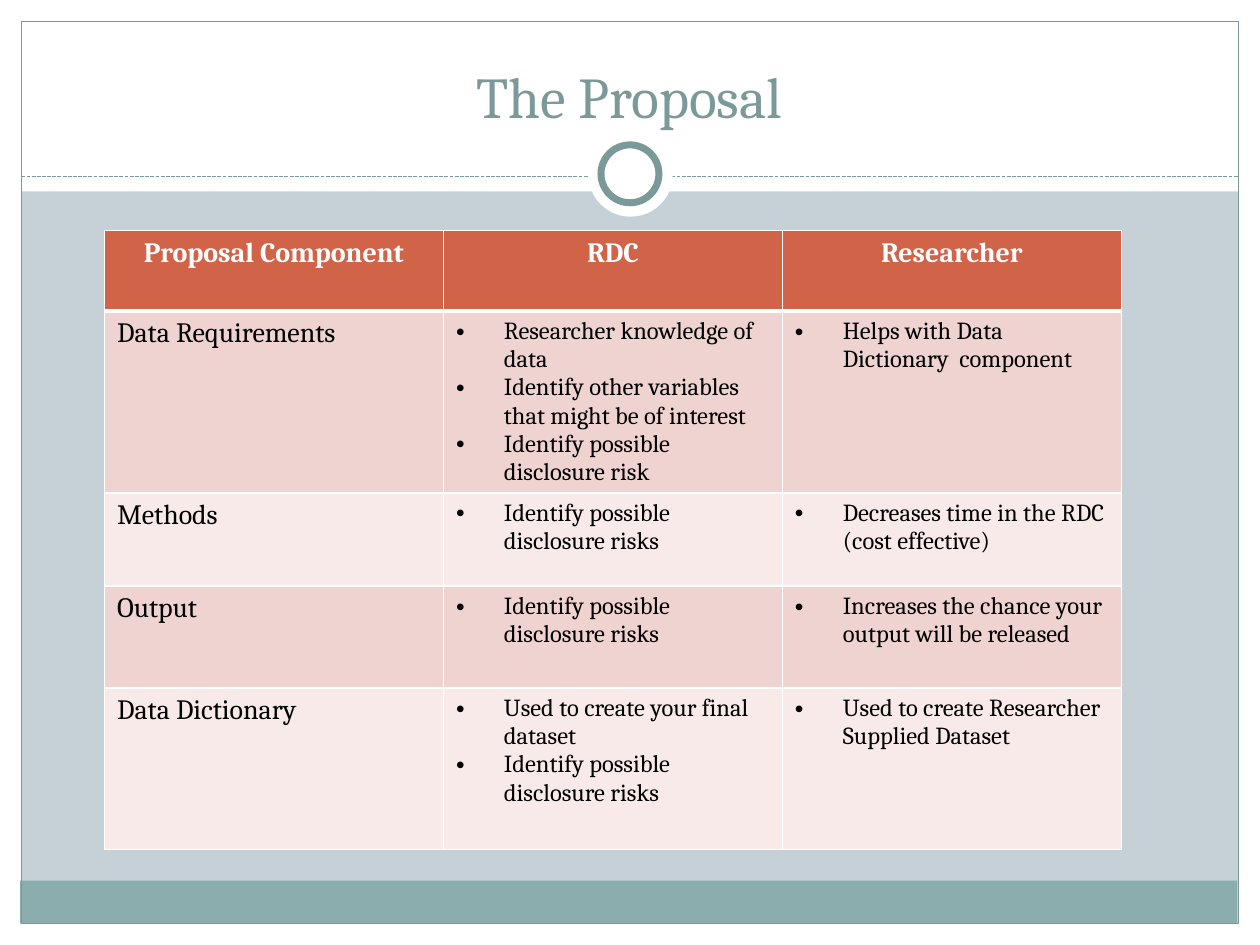
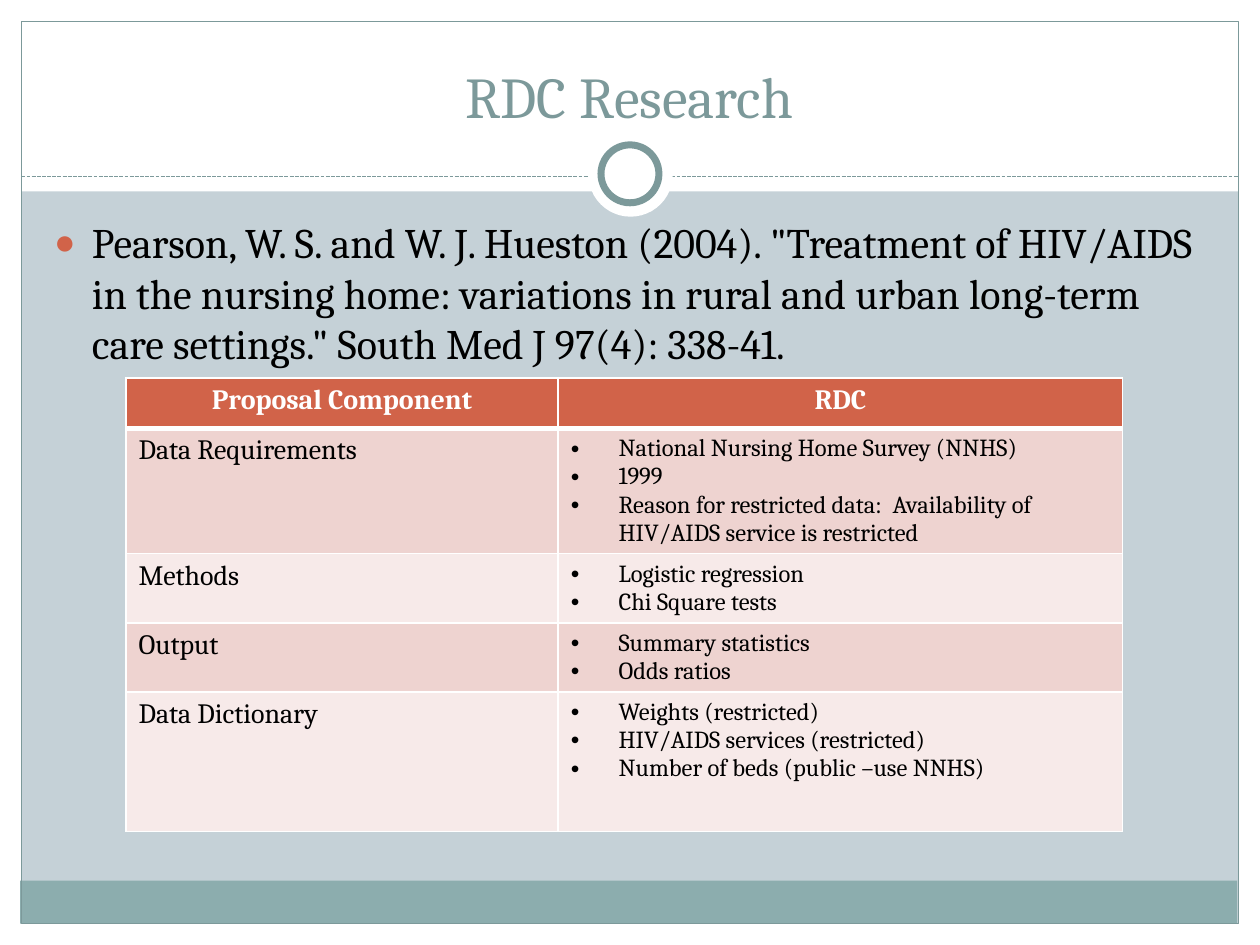
from dataclasses import dataclass

from lxml.etree import SubElement
from pptx import Presentation
from pptx.dml.color import RGBColor
from pptx.enum.dml import MSO_LINE
from pptx.enum.shapes import MSO_CONNECTOR, MSO_SHAPE
from pptx.enum.text import MSO_ANCHOR, MSO_AUTO_SIZE, PP_ALIGN
from pptx.oxml.ns import qn
from pptx.util import Inches, Pt

FONT = "Cambria"
WHITE, BLACK = "FFFFFF", "000000"
BACK, TEAL, BAND, RUST = "C5D1D7", "7C999A", "8CADAE", "D16349"
ROSE, BLUSH = "EED3D0", "F7EAE9"


@dataclass
class Part:
    """One piece of the slide frame, lengths in inches."""
    box: tuple[float, float, float, float]
    fill: str = ""
    line: float = 0
    kind: MSO_SHAPE = MSO_SHAPE.RECTANGLE


@dataclass
class Grid:
    """A table: the first row is the header, tuples in cells are bullet lists."""
    left: float
    top: float
    cols: list[float]
    highs: list[float]
    rows: list[list[str | tuple[str, ...]]]


PARTS = [
    Part((0, 7.33, 10, 0.17), WHITE),
    Part((0, 0, 10, 1.52), WHITE),
    Part((0, 0, 0.17, 7.5), WHITE),
    Part((9.83, 0, 0.17, 7.5), WHITE),
    Part((0.16, 6.99, 9.66, 0.34), BAND),
    Part((0.17, 0.17, 9.66, 7.16), line=0.75),
]
RINGS = [
    Part((4.67, 1.05, 0.67, 0.67), WHITE, kind=MSO_SHAPE.OVAL),
    Part((4.77, 1.15, 0.46, 0.46), WHITE, 4, MSO_SHAPE.OVAL),
]

RISKS = ("Identify possible disclosure risks",)
ROLES = Grid(0.83, 1.83, [2.69] * 3, [0.64, 1.04, 0.74, 0.81, 1.28], [
    ["Proposal Component", "RDC", "Researcher"],
    ["Data Requirements",
     ("Researcher knowledge of data",
      "Identify other variables that might be of interest",
      "Identify possible disclosure risk"),
     ("Helps with Data Dictionary  component",)],
    ["Methods", RISKS, ("Decreases time in the RDC (cost effective)",)],
    ["Output", RISKS, ("Increases the chance your output will be released",)],
    ["Data Dictionary", ("Used to create your final dataset", *RISKS),
     ("Used to create Researcher Supplied Dataset",)],
])
STUDY = Grid(1, 3, [3.43, 4.48], [0.4, 0.76, 0.5, 0.5, 1.11], [
    ["Proposal Component", "RDC"],
    ["Data Requirements",
     ("National Nursing Home Survey (NNHS)", "1999",
      "Reason for restricted data:  Availability of HIV/AIDS service is restricted")],
    ["Methods", ("Logistic regression", "Chi Square tests")],
    ["Output", ("Summary statistics", "Odds ratios")],
    ["Data Dictionary",
     ("Weights (restricted)", "HIV/AIDS services (restricted)",
      "Number of beds (public –use NNHS)")],
])
CITE = ('Pearson, W. S. and W. J. Hueston (2004). "Treatment of HIV/AIDS in the '
        'nursing home: variations in rural and urban long-term care settings." '
        'South Med J 97(4): 338-41.')


def paint(color, code: str) -> None:
    color.rgb = RGBColor.from_string(code)


def style(para, size: float, code: str, bold: bool = False) -> None:
    for run in para.runs:
        run.font.name, run.font.size, run.font.bold = FONT, Pt(size), bold
        paint(run.font.color, code)


def bullet(para, char: str, indent: float, code: str = "", scale: int = 100) -> None:
    props = para._p.get_or_add_pPr()
    props.set("marL", str(Inches(indent)))
    props.set("indent", str(-Inches(indent)))
    if code:
        SubElement(SubElement(props, qn("a:buClr")), qn("a:srgbClr"), val=code)
    SubElement(props, qn("a:buSzPct"), val=str(scale * 1000))
    SubElement(props, qn("a:buFont"), typeface="Arial")
    SubElement(props, qn("a:buChar"), char=char)


def place(shape, left: float, top: float, width: float, height: float) -> None:
    shape.left, shape.top = Inches(left), Inches(top)
    shape.width, shape.height = Inches(width), Inches(height)


def add_part(slide, part: Part) -> None:
    shape = slide.shapes.add_shape(part.kind, *map(Inches, part.box))
    shape.shadow.inherit = False
    if part.fill:
        shape.fill.solid()
        paint(shape.fill.fore_color, part.fill)
    else:
        shape.fill.background()
    if part.line:
        paint(shape.line.color, TEAL)
        shape.line.width = Pt(part.line)
    else:
        shape.line.fill.background()


def add_rule(slide) -> None:
    rule = slide.shapes.add_connector(
        MSO_CONNECTOR.STRAIGHT, Inches(0.17), Inches(1.4), Inches(9.83), Inches(1.4))
    paint(rule.line.color, TEAL)
    rule.line.width = Pt(0.75)
    rule.line.dash_style = MSO_LINE.SQUARE_DOT
    SubElement(rule._element.spPr, qn("a:effectLst"))


def add_page(deck, layout: int, title: str):
    """Add a slide with the shared background, frame and title."""
    slide = deck.slides.add_slide(deck.slide_layouts[layout])
    slide.background.fill.solid()
    paint(slide.background.fill.fore_color, BACK)
    holders = list(slide.placeholders)
    for part in PARTS:
        add_part(slide, part)
    add_rule(slide)
    for ring in RINGS:
        add_part(slide, ring)
    for holder in holders:  # keep the text in front of the frame
        holder.element.getparent().append(holder.element)

    head = slide.shapes.title
    place(head, 0.33, 0.25, 9.33, 0.83)
    frame = head.text_frame
    frame.text = title
    frame.auto_size = MSO_AUTO_SIZE.NONE
    frame.vertical_anchor = MSO_ANCHOR.BOTTOM
    frame.paragraphs[0].alignment = PP_ALIGN.CENTER
    style(frame.paragraphs[0], 33, TEAL)
    return slide


def edge(cell, row: int) -> None:
    """Draw white cell borders, with a thick one under the header."""
    props = cell._tc.get_or_add_tcPr()
    thick = {(0, "B"), (1, "T")}
    for side in "LRTB":
        width = Pt(3 if (row, side) in thick else 1)
        line = SubElement(props, qn(f"a:ln{side}"), w=str(width))
        SubElement(SubElement(line, qn("a:solidFill")), qn("a:srgbClr"), val=WHITE)


def fill_cell(cell, text: str | tuple[str, ...], row: int) -> None:
    edge(cell, row)
    cell.fill.solid()
    paint(cell.fill.fore_color, RUST if row == 0 else ROSE if row % 2 else BLUSH)
    listed = isinstance(text, tuple)
    cell.text_frame.text = "\n".join(text) if listed else text
    for para in cell.text_frame.paragraphs:
        if listed:
            bullet(para, "•", 0.38)
            style(para, 14, BLACK)
        elif row == 0:
            para.alignment = PP_ALIGN.CENTER
            style(para, 16, WHITE, True)
        else:
            style(para, 16, BLACK)


def add_grid(slide, grid: Grid) -> None:
    table = slide.shapes.add_table(
        len(grid.highs), len(grid.cols), Inches(grid.left), Inches(grid.top),
        Inches(sum(grid.cols)), Inches(sum(grid.highs))).table
    for col, width in zip(table.columns, grid.cols):
        col.width = Inches(width)
    for row, high in zip(table.rows, grid.highs):
        row.height = Inches(high)
    for r, texts in enumerate(grid.rows):
        for c, text in enumerate(texts):
            fill_cell(table.cell(r, c), text, r)


def add_cite(slide) -> None:
    body = slide.placeholders[1]
    place(body, 0.33, 1.67, 9.3, 5)
    body.text_frame.text = CITE
    body.text_frame.auto_size = MSO_AUTO_SIZE.NONE
    para = body.text_frame.paragraphs[0]
    bullet(para, "●", 0.3, RUST, 85)
    style(para, 24, BLACK)


def main() -> None:
    deck = Presentation()
    deck.slide_width, deck.slide_height = Inches(10), Inches(7.5)
    add_grid(add_page(deck, 5, "The Proposal"), ROLES)
    study = add_page(deck, 1, "RDC Research")
    add_cite(study)
    add_grid(study, STUDY)
    deck.save("out.pptx")


if __name__ == "__main__":
    main()
